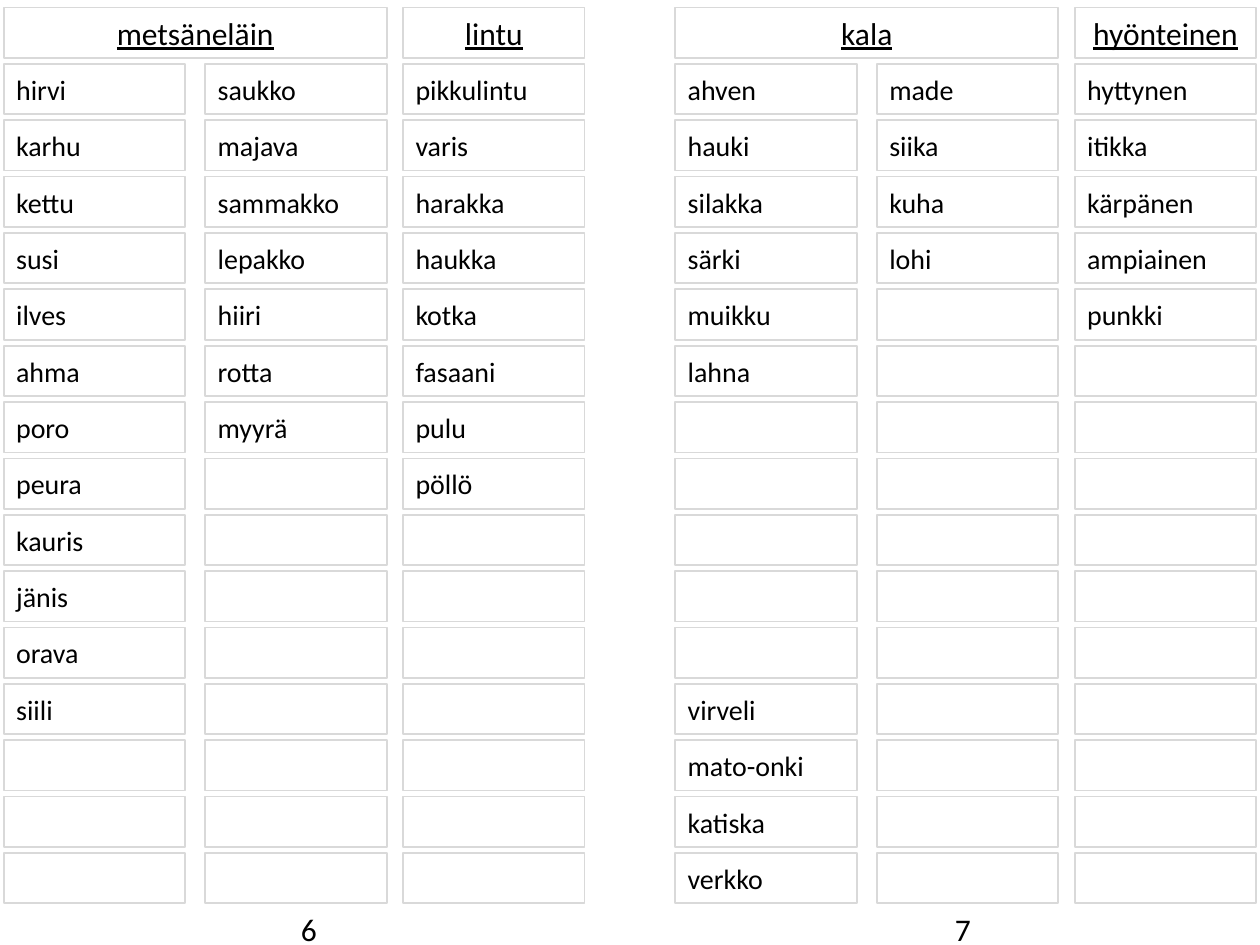
from pptx import Presentation
from pptx.dml.color import RGBColor
from pptx.enum.shapes import MSO_SHAPE
from pptx.enum.text import MSO_ANCHOR, PP_ALIGN
from pptx.util import Inches, Pt

RECT = MSO_SHAPE.RECTANGLE
MIDDLE = MSO_ANCHOR.MIDDLE
LEFT, CENTER = PP_ALIGN.LEFT, PP_ALIGN.CENTER

COLORS = {"text": "000000", "border": "D9D9D9"}
FONT = "Calibri"
ROWS = 15
TOP, LAST_TOP = 0.06, 6.77
PITCH = (LAST_TOP - TOP) / ROWS
CELL_W, CELL_H = 1.44, 0.4
COLUMNS = (0, 1.6, 3.17)

PAGES = [
    {
        "left": 0.03,
        "number": ("6", 2.29),
        "headers": [("metsäneläin", 0, 1), ("lintu", 2, 2)],
        "words": [
            {1: "hirvi karhu kettu susi ilves ahma poro peura kauris jänis orava siili"},
            {1: "saukko majava sammakko lepakko hiiri rotta myyrä"},
            {1: "pikkulintu varis harakka haukka kotka fasaani pulu pöllö"},
        ],
    },
    {
        "left": 5.36,
        "number": ("7", 7.48),
        "headers": [("kala", 0, 1), ("hyönteinen", 2, 2)],
        "words": [
            {1: "ahven hauki silakka särki muikku lahna", 12: "virveli mato-onki katiska verkko"},
            {1: "made siika kuha lohi"},
            {1: "hyttynen itikka kärpänen ampiainen punkki"},
        ],
    },
]


class WordSheet:
    def __init__(self, slide):
        self.slide = slide

    def set_text(self, tf, text, size, align=LEFT, underline=False):
        tf.text = text
        p = tf.paragraphs[0]
        p.alignment = align
        for r in p.runs:
            r.font.name = FONT
            r.font.size = Pt(size)
            r.font.underline = underline
            r.font.color.rgb = RGBColor.from_string(COLORS["text"])

    def box(self, page_left, row, first, last, text="", **style):
        left = page_left + COLUMNS[first]
        width = COLUMNS[last] - COLUMNS[first] + CELL_W
        sp = self.slide.shapes.add_shape(
            RECT, Inches(left), Inches(TOP + row * PITCH), Inches(width), Inches(CELL_H)
        )
        sp.shadow.inherit = False
        sp.fill.background()
        sp.line.color.rgb = RGBColor.from_string(COLORS["border"])
        sp.line.width = Pt(1)
        tf = sp.text_frame
        tf.vertical_anchor = MIDDLE
        if text:
            self.set_text(tf, text, **style)

    def header(self, page_left, text, first, last):
        self.box(page_left, 0, first, last, text, size=18, align=CENTER, underline=True)

    def column(self, page_left, col, groups):
        words = {
            start + i: word
            for start, group in groups.items()
            for i, word in enumerate(group.split())
        }
        for row in range(1, ROWS + 1):
            self.box(page_left, row, col, col, words.get(row, ""), size=16)

    def page_number(self, text, left):
        sp = self.slide.shapes.add_textbox(Inches(left), Inches(7.17), Inches(0.36), Inches(0.4))
        sp.text_frame.word_wrap = True
        self.set_text(sp.text_frame, text, 18)


def main():
    prs = Presentation()
    prs.slide_width, prs.slide_height = Inches(10), Inches(7.5)
    sheet = WordSheet(prs.slides.add_slide(prs.slide_layouts[6]))
    for page in PAGES:
        sheet.page_number(*page["number"])
        for header in page["headers"]:
            sheet.header(page["left"], *header)
        for col, groups in enumerate(page["words"]):
            sheet.column(page["left"], col, groups)
    prs.save("out.pptx")


if __name__ == "__main__":
    main()
